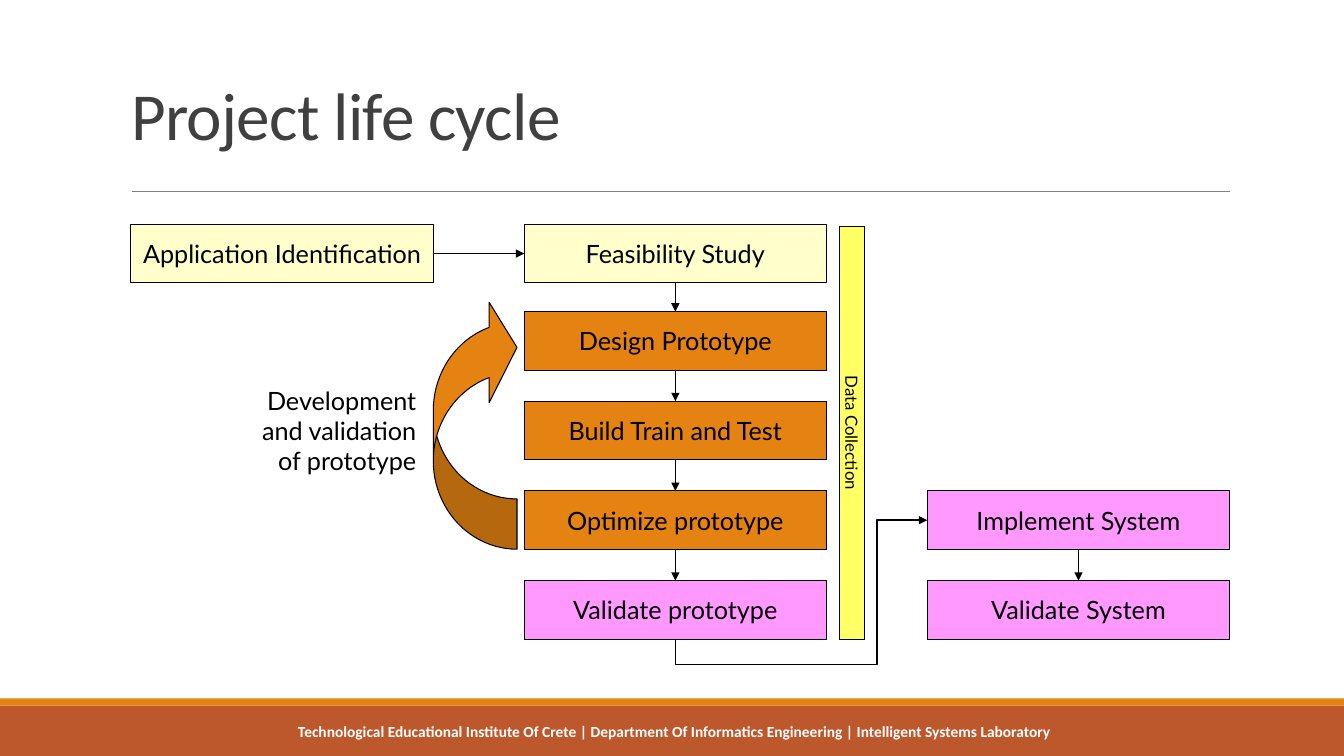
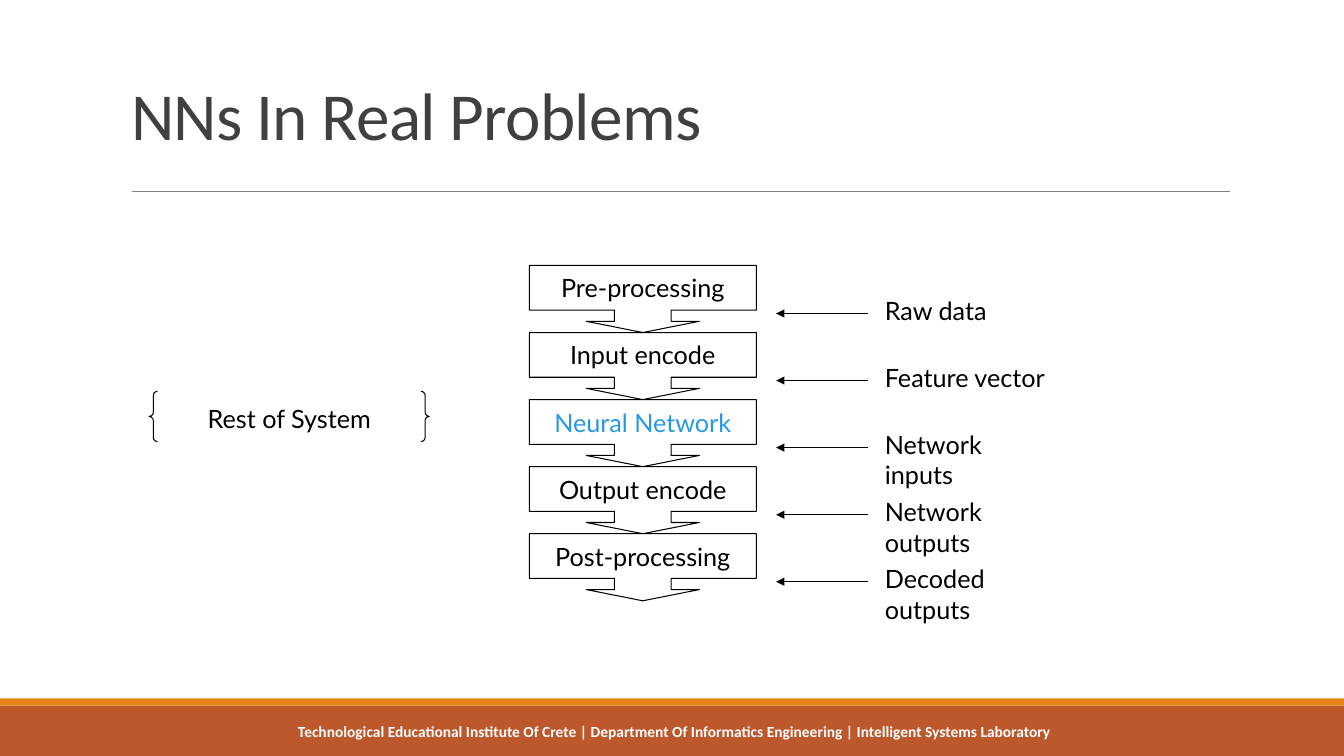
from lxml import etree
from pptx import Presentation, util as u
from pptx.dml import color
from pptx.enum import shapes, text
from pptx.oxml import ns

BLACK = "000000"
WHITE = "FFFFFF"
ORANGE = "E48312"
RUST = "BD582C"
GREY = "808080"
TITLE_GREY = "404040"
CREAM = "FFFFCC"
PINK = "FF99FF"
YELLOW = "FFFF66"
BLUE = "2998E3"
TITLE_FONT = "Calibri"
DIAGRAM_FONT = "Lato"
FOOTER = ("Technological Educational Institute Of Crete | Department Of Informatics "
          "Engineering | Intelligent Systems Laboratory")
SHAPE = shapes.MSO_SHAPE
ALIGN = text.PP_ALIGN
TOP, LEFT, BOTTOM, RIGHT = range(4)


def rgb(value):
    return color.RGBColor.from_string(value)


def cm(*lengths):
    return [u.Cm(length) for length in lengths]


def write(frame, content, size=18, font=DIAGRAM_FONT, ink=BLACK, align=ALIGN.LEFT, bold=False):
    paragraph = frame.paragraphs[0]
    paragraph.text = content
    paragraph.alignment = align
    paragraph.font.size = u.Pt(size)
    paragraph.font.name = font
    paragraph.font.bold = bold
    paragraph.font.color.rgb = rgb(ink)
    return paragraph


def add_shape(slide, kind, box, fill=None, line=BLACK, content=None, size=18, ink=BLACK, adjust=()):
    shape = slide.shapes.add_shape(kind, *cm(*box))
    shape.shadow.inherit = False
    for index, value in enumerate(adjust):
        shape.adjustments[index] = value
    if fill:
        shape.fill.solid()
        shape.fill.fore_color.rgb = rgb(fill)
    else:
        shape.fill.background()
    if line:
        shape.line.color.rgb = rgb(line)
        shape.line.width = u.Pt(0.75)
    else:
        shape.line.fill.background()
    if content:
        frame = shape.text_frame
        frame.word_wrap = False
        frame.vertical_anchor = text.MSO_ANCHOR.MIDDLE
        write(frame, content, size, ink=ink, align=ALIGN.CENTER)
    return shape


def add_label(slide, box, content, **style):
    frame = slide.shapes.add_textbox(*cm(*box)).text_frame
    frame.word_wrap = True
    write(frame, content, **style)


def add_line(slide, ends=(0, 0, 0, 0), kind=shapes.MSO_CONNECTOR.STRAIGHT, ink=BLACK, width=0.75, arrow=True):
    line = slide.shapes.add_connector(kind, *cm(*ends))
    line.line.color.rgb = rgb(ink)
    line.line.width = u.Pt(width)
    if arrow:
        outline = line.element.spPr.find(ns.qn("a:ln"))
        etree.SubElement(outline, ns.qn("a:tailEnd"), type="triangle")
    etree.SubElement(line.element.spPr, ns.qn("a:effectLst"))
    return line


def link(slide, start, start_site, end, end_site, kind=shapes.MSO_CONNECTOR.STRAIGHT):
    line = add_line(slide, kind=kind, width=1)
    line.begin_connect(start, start_site)
    line.end_connect(end, end_site)
    return line


def transform(shape, **attributes):
    frame = shape.element.xpath(".//a:xfrm")[0]
    for name, value in attributes.items():
        frame.set(name, value)


def link_around(slide, start, end):
    line = link(slide, start, BOTTOM, end, LEFT, shapes.MSO_CONNECTOR.ELBOW)
    start_x, start_y = start.left + start.width // 2, start.top + start.height
    end_x, end_y = end.left, end.top + end.height // 2
    across, rise = end_x - start_x, start_y - end_y
    line.width, line.height = rise, across
    line.left = (start_x + end_x - rise) // 2
    line.top = (start_y + end_y - across) // 2
    transform(line, rot="5400000", flipH="1", flipV="1")
    geometry = line.element.spPr.find(ns.qn("a:prstGeom"))
    geometry.set("prst", "bentConnector4")
    guides = geometry.find(ns.qn("a:avLst"))
    for name, value in (("adj1", -21300), ("adj2", 80000)):
        etree.SubElement(guides, ns.qn("a:gd"), name=name, fmla=f"val {value}")


def decorate_layout(slide):
    parts = [
        add_shape(slide, SHAPE.RECTANGLE, (0, 17.78, 33.87, 1.27), RUST, None),
        add_shape(slide, SHAPE.RECTANGLE, (0, 17.6, 33.87, 0.18), ORANGE, None),
        add_line(slide, (3.33, 4.82, 31, 4.82), ink=GREY, width=0.5, arrow=False),
    ]
    for part in parts:
        slide.slide_layout.shapes.element.append(part.element)


def add_slide(presentation, heading):
    slide = presentation.slides.add_slide(presentation.slide_layouts[5])
    title = slide.shapes.title
    title.left, title.top, title.width, title.height = cm(3.05, 1.57, 27.94, 2.44)
    frame = title.text_frame
    frame.auto_size = text.MSO_AUTO_SIZE.NONE
    frame.vertical_anchor = text.MSO_ANCHOR.BOTTOM
    paragraph = write(frame, heading, 48, TITLE_FONT, TITLE_GREY)
    paragraph.line_spacing = 0.85
    title.element.xpath(".//a:defRPr")[0].set("spc", "-50")
    add_label(slide, (0.38, 18.08, 33.25, 0.97), FOOTER, size=11, font=TITLE_FONT,
              ink=WHITE, align=ALIGN.CENTER, bold=True)
    return slide


def add_step(slide, left, top, fill, content):
    return add_shape(slide, SHAPE.FLOWCHART_PROCESS, (left, top, 7.62, 1.48), fill, content=content)


def draw_life_cycle(slide):
    first_row = 5.65
    rows = [7.85 + 2.26 * index for index in range(4)]
    middle, right = 13.21, 23.37
    identification = add_step(slide, 3.3, first_row, CREAM, "Application Identification")
    stages = [add_step(slide, middle, first_row, CREAM, "Feasibility Study")]
    names = ("Design Prototype", "Build Train and Test", "Optimize prototype", "Validate prototype")
    for top, fill, name in zip(rows, (ORANGE, ORANGE, ORANGE, PINK), names):
        stages.append(add_step(slide, middle, top, fill, name))
    implement = add_step(slide, right, rows[2], PINK, "Implement System")
    validate = add_step(slide, right, rows[3], PINK, "Validate System")

    collection = add_shape(slide, SHAPE.RECTANGLE, (16.28, 10.59, 10.39, 0.64), YELLOW,
                           content="Data Collection", size=12)
    collection.rotation = 90

    link(slide, identification, RIGHT, stages[0], LEFT)
    for upper, lower in [*zip(stages, stages[1:]), (implement, validate)]:
        link(slide, upper, BOTTOM, lower, TOP)
    link_around(slide, stages[-1], implement)

    loop = add_shape(slide, SHAPE.CURVED_RIGHT_ARROW, (10.92, 7.49, 2.11, 6.35), ORANGE,
                     adjust=(0.6, 1.2, 0.333))
    transform(loop, flipV="1")
    add_label(slide, (6.02, 9.58, 4.72, 2.54), "Development and validation of prototype",
              align=ALIGN.RIGHT)


def draw_pipeline(slide):
    pitch = 1.69
    steps = (
        ("Pre-processing", BLACK, "Raw data", 4.57),
        ("Input encode", BLACK, "Feature vector", 4.57),
        ("Neural Network", BLUE, "Network inputs", 3.5),
        ("Output encode", BLACK, "Network outputs", 3.5),
        ("Post-processing", BLACK, "Decoded outputs", 3.5),
    )
    for index, (name, ink, output, width) in enumerate(steps):
        offset = pitch * index
        add_shape(slide, SHAPE.DOWN_ARROW_CALLOUT, (13.34, 6.69 + offset, 5.72, pitch), WHITE,
                  content=name, ink=ink, adjust=(0.844, 0.844, 0.167, 0.667))
        arrow_top = 7.9 + offset
        add_line(slide, (21.87, arrow_top, 19.56, arrow_top))
        add_label(slide, (22.05, arrow_top - 0.58, width, 1.02), output)
    add_shape(slide, SHAPE.DOUBLE_BRACE, (3.76, 9.86, 7.06, 1.27), content="Rest of System",
              adjust=(0.083,))


def main():
    presentation = Presentation()
    presentation.slide_width, presentation.slide_height = cm(33.87, 19.05)
    life_cycle = add_slide(presentation, "Project life cycle")
    decorate_layout(life_cycle)
    draw_life_cycle(life_cycle)
    draw_pipeline(add_slide(presentation, "NNs In Real Problems"))
    presentation.save("out.pptx")


if __name__ == "__main__":
    main()
